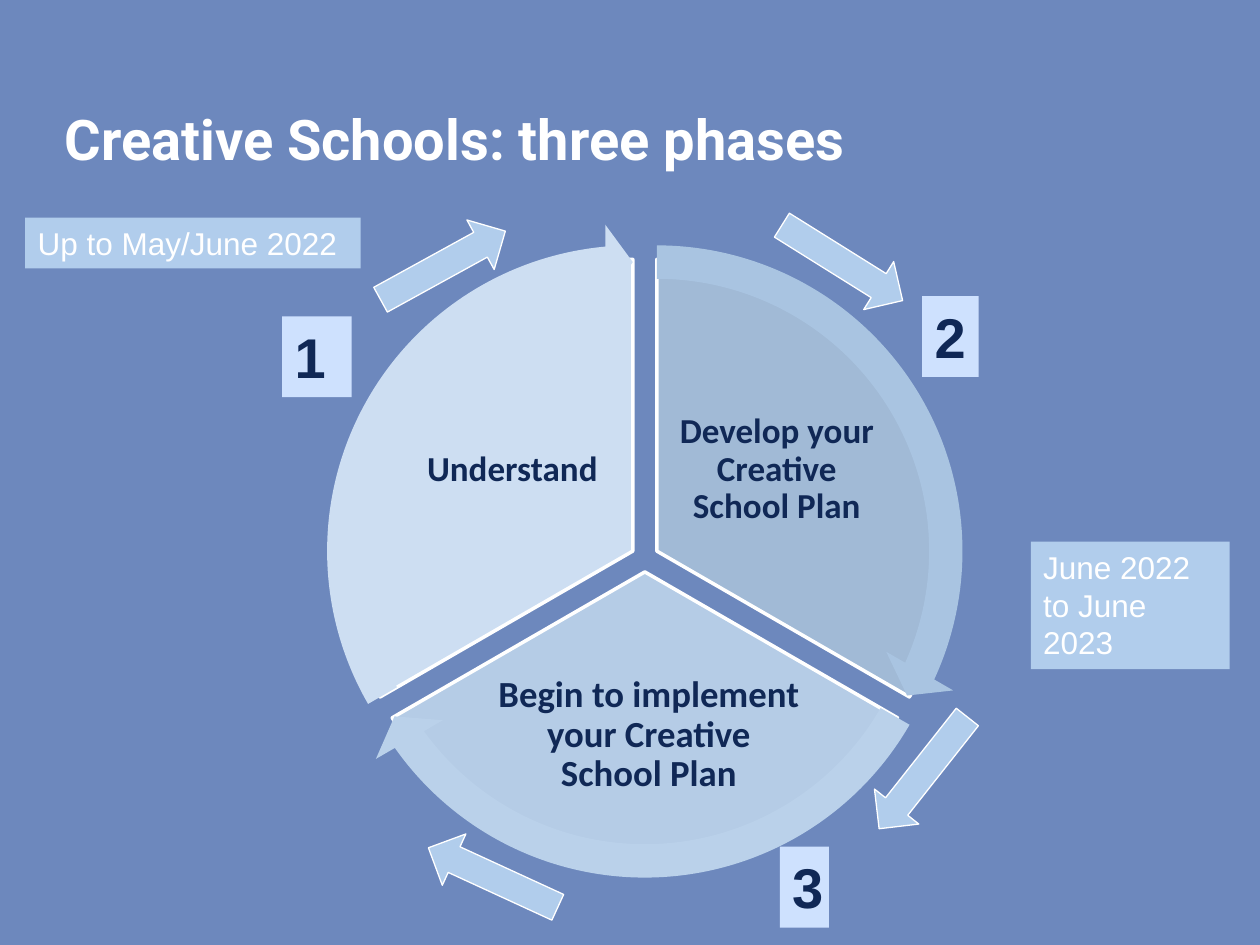
"""Build the slide showing the three phases of Creative Schools as a wheel."""
from math import cos, radians, sin

from pptx import Presentation
from pptx.dml.color import RGBColor
from pptx.enum.shapes import MSO_SHAPE
from pptx.enum.text import MSO_ANCHOR, MSO_AUTO_SIZE, PP_ALIGN
from pptx.util import Cm, Pt

BACKGROUND, WHITE, NAVY = "6D88BD", "FFFFFF", "102856"
SKY, PALE = "B1CDEC", "CEE1FE"

TITLE = "Creative Schools: three phases"
PHASES = [
    {"text": "Develop your Creative School Plan", "size": 20, "pie": "A1BAD6",
     "arrow": "A9C4E1", "label": (15.66, 9.47, 4.19, 3.51)},
    {"text": "Begin to implement your Creative School Plan", "size": 21, "pie": "B5CCE6",
     "arrow": "BAD1EA", "label": (13.08, 14.82, 6.3, 3.07)},
    {"text": "Understand", "size": 20, "pie": "CDDEF2",
     "arrow": "CDDEF2", "label": (10.33, 9.47, 4.19, 3.51)},
]
NUMBERS = [
    ("1", (5.69, 6.38, 1.4, 1.63)),
    ("2", (18.59, 5.97, 1.14, 1.63)),
    ("3", (15.72, 17.07, 0.99, 1.63)),
]
OUTER_ARROWS = [(16.98, 5.3, 32), (18.61, 15.58, 128.3), (8.93, 5.35, 331.2), (9.94, 17.69, 204.7)]
DATES = [
    ("Up to May/June 2022", (0.51, 4.39, 6.76, 1.02)),
    ("June 2022 to June 2023", (20.78, 10.92, 4.01, 2.57)),
]
HUB_X, HUB_Y, GAP = 13, 11.25, 0.28
PIE_SIZE, RING_SIZE = 11.76, 13.21
ANGLE_UNIT = 0.6
HEAD_ANGLE = 3.275


def color(value):
    return RGBColor.from_string(value)


def centered(x, y, width, height):
    return x - width / 2, y - height / 2, width, height


def add_shape(page, kind, place, fill, line=None, adjustments=()):
    shape = page.shapes.add_shape(kind, *map(Cm, place))
    shape.shadow.inherit = False
    shape.fill.solid()
    shape.fill.fore_color.rgb = color(fill)
    if line:
        shape.line.color.rgb = color(WHITE)
        shape.line.width = Pt(line)
    else:
        shape.line.fill.background()
    for index, value in enumerate(adjustments):
        shape.adjustments[index] = value
    return shape


def write(shape, text, font, size, ink, bold=True, align=PP_ALIGN.LEFT,
          anchor=MSO_ANCHOR.TOP, spacing=None, margins=None):
    frame = shape.text_frame
    frame.word_wrap = True
    frame.vertical_anchor = anchor
    if margins:
        frame.margin_left, frame.margin_top, frame.margin_right, frame.margin_bottom = map(Cm, margins)
    paragraph = frame.paragraphs[0]
    paragraph.text = text
    paragraph.alignment = align
    if spacing:
        paragraph.line_spacing = spacing
    paragraph.font.name = font
    paragraph.font.size = Pt(size)
    paragraph.font.bold = bold
    paragraph.font.color.rgb = color(ink)


def add_caption(page, text, place, fill, size, ink, bold):
    box = add_shape(page, MSO_SHAPE.RECTANGLE, place, fill)
    write(box, text, "Arial", size, ink, bold)
    box.text_frame.auto_size = MSO_AUTO_SIZE.SHAPE_TO_FIT_TEXT


def add_wheel(page):
    rings = []
    for index, phase in enumerate(PHASES):
        start = (270 + 120 * index) % 360
        end = (start + 120) % 360
        middle = radians(start + 60)
        center = HUB_X + GAP * cos(middle), HUB_Y + GAP * sin(middle)
        first, last = start * ANGLE_UNIT, end * ANGLE_UNIT
        add_shape(page, MSO_SHAPE.PIE, centered(*center, PIE_SIZE, PIE_SIZE),
                  phase["pie"], 2, (first, last))
        label = page.shapes.add_textbox(*map(Cm, centered(*phase["label"])))
        write(label, phase["text"], "Calibri", phase["size"], NAVY, align=PP_ALIGN.CENTER,
              anchor=MSO_ANCHOR.MIDDLE, spacing=0.9, margins=(0.07,) * 4)
        rings.append((centered(*center, RING_SIZE, RING_SIZE), phase["arrow"],
                      (0.051, HEAD_ANGLE, last - HEAD_ANGLE, first, 0.059)))
    for place, fill, adjustments in rings:
        add_shape(page, MSO_SHAPE.CIRCULAR_ARROW, place, fill, adjustments=adjustments)


def main():
    deck = Presentation()
    deck.slide_width, deck.slide_height = Cm(25.4), Cm(19.05)
    page = deck.slides.add_slide(deck.slide_layouts[6])
    page.background.fill.solid()
    page.background.fill.fore_color.rgb = color(BACKGROUND)

    title = page.shapes.add_textbox(Cm(1.3), Cm(1.52), Cm(23.39), Cm(2.01))
    write(title, TITLE, "Roboto", 32, WHITE, anchor=MSO_ANCHOR.BOTTOM,
          spacing=0.8, margins=(0, 0, 0, 0.08))
    add_wheel(page)
    for text, place in NUMBERS:
        add_caption(page, text, place, PALE, 32, NAVY, True)
    for x, y, rotation in OUTER_ARROWS:
        arrow = add_shape(page, MSO_SHAPE.RIGHT_ARROW, centered(x, y, 2.87, 1.14), SKY, 0.75)
        arrow.rotation = rotation
    for text, place in DATES:
        add_caption(page, text, place, SKY, 18, WHITE, False)
    deck.save("out.pptx")


if __name__ == "__main__":
    main()
